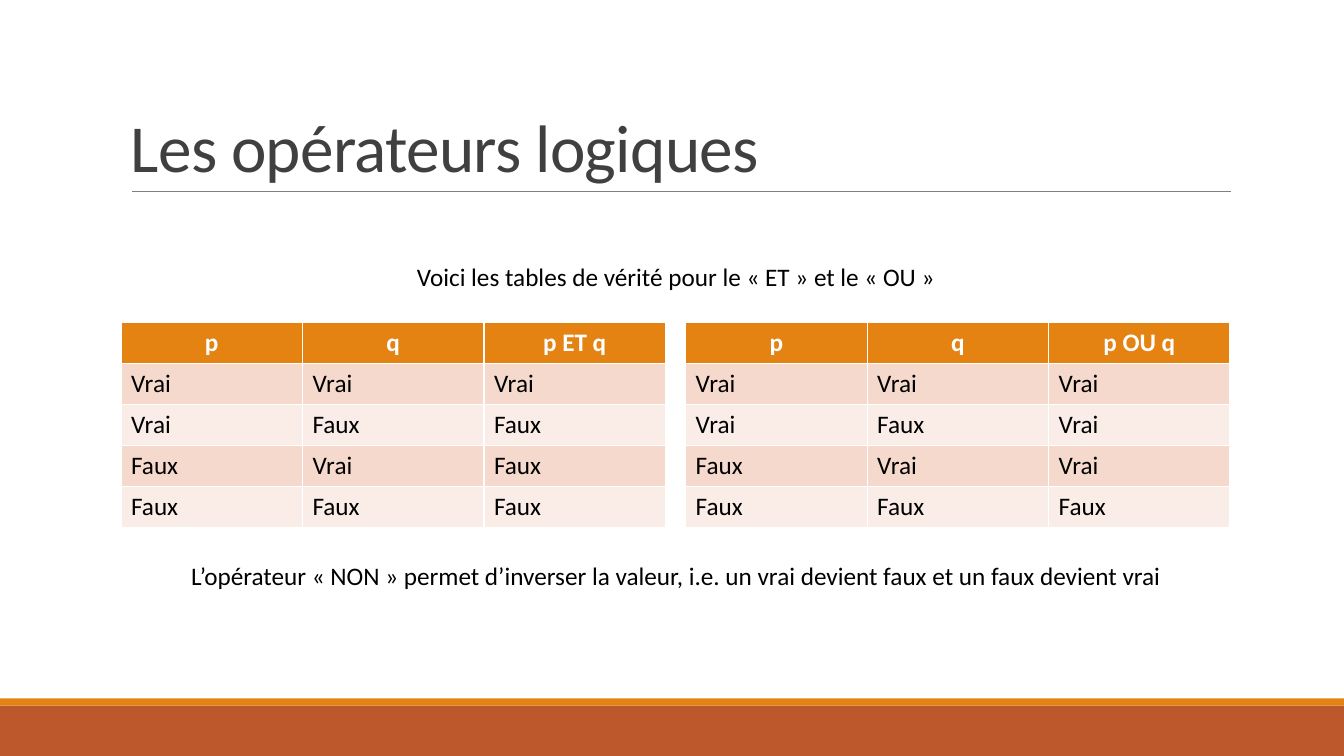
from itertools import product

from lxml.etree import SubElement
from pptx import Presentation
from pptx.dml.color import RGBColor as RGB
from pptx.enum.shapes import MSO_CONNECTOR as LINK, MSO_SHAPE as SHAPE
from pptx.enum.text import MSO_ANCHOR as ANCHOR, PP_ALIGN as ALIGN
from pptx.oxml.ns import qn
from pptx.util import Inches, Pt

WHITE = RGB(0xFF, 0xFF, 0xFF)
BLACK = RGB(0, 0, 0)
DARK = RGB(0x40, 0x40, 0x40)
GRAY = RGB(0x80, 0x80, 0x80)
RUST = RGB(0xBD, 0x58, 0x2C)
ORANGE = RGB(0xE4, 0x83, 0x12)
ROSE = RGB(0xF5, 0xD9, 0xCC)
PALE = RGB(0xFA, 0xED, 0xE7)


def style(para, size, color, align, bold=False):
    para.alignment = align
    font = para.font
    font.name = "Calibri"
    font.size = Pt(size)
    font.bold = bold
    font.color.rgb = color


def label(left, top, width, height, text, size, color, align):
    box = slide.shapes.add_textbox(Inches(left), Inches(top), Inches(width), Inches(height))
    box.text_frame.text = text
    style(box.text_frame.paragraphs[0], size, color, align)
    return box


deck = Presentation()
deck.slide_width = Inches(13.33)
deck.slide_height = Inches(7.5)
slide = deck.slides.add_slide(deck.slide_layouts[6])

for top, height, color in [(7, 0.5, RUST), (6.93, 0.07, ORANGE)]:
    band = slide.shapes.add_shape(
        SHAPE.RECTANGLE, 0, Inches(top), deck.slide_width, Inches(height))
    band.shadow.inherit = False
    band.fill.solid()
    band.fill.fore_color.rgb = color
    band.line.fill.background()

rule = slide.shapes.add_connector(
    LINK.STRAIGHT, Inches(1.31), Inches(1.9), Inches(12.21), Inches(1.9))
rule.line.color.rgb = GRAY
rule.line.width = Pt(0.5)
SubElement(rule.element.spPr, qn("a:effectLst"))

title = label(1.2, 0.31, 11, 1.59, "Les opérateurs logiques", 48, DARK, ALIGN.LEFT)
title.text_frame.word_wrap = True
title.text_frame.vertical_anchor = ANCHOR.BOTTOM
title.text_frame.paragraphs[0].line_spacing = 0.85
for run in title.element.iter(qn("a:r")):
    run.get_or_add_rPr().set("spc", "-50")

for left, name, test in [(1.2, "ET", all), (6.8, "OU", any)]:
    rows = [("p", "q", f"p {name} q")]
    for pair in product((True, False), repeat=2):
        rows.append(["Vrai" if value else "Faux" for value in (*pair, test(pair))])
    table = slide.shapes.add_table(
        5, 3, Inches(left), Inches(3.2), Inches(5.4), Inches(2.03)).table
    for r, row in enumerate(rows):
        head = r == 0
        fill = ORANGE if head else ROSE if r % 2 else PALE
        for c, text in enumerate(row):
            cell = table.cell(r, c)
            cell.text = text
            cell.fill.solid()
            cell.fill.fore_color.rgb = fill
            style(cell.text_frame.paragraphs[0], 18, WHITE if head else BLACK,
                  ALIGN.CENTER if head else ALIGN.LEFT, head)

label(4, 2.54, 5.41, 0.4,
      "Voici les tables de vérité pour le « ET » et le « OU »",
      18, BLACK, ALIGN.CENTER)
label(1.76, 5.51, 9.89, 0.4,
      "L’opérateur « NON » permet d’inverser la valeur, "
      "i.e. un vrai devient faux et un faux devient vrai",
      18, BLACK, ALIGN.CENTER)

deck.save("out.pptx")
